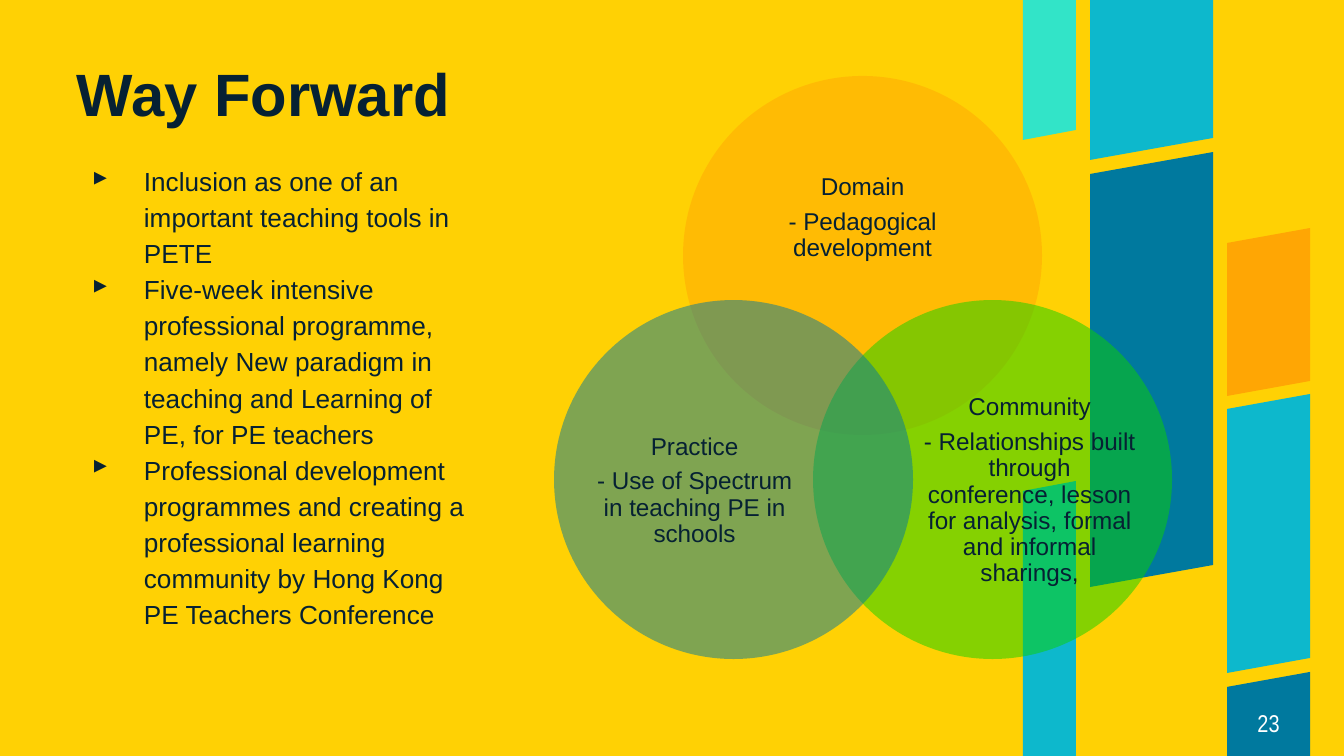
from lxml import etree
from pptx import Presentation
from pptx import util as u
from pptx.dml.color import RGBColor
from pptx.enum import shapes, text
from pptx.oxml.ns import qn

PX = 914400 / 134.4
WIDTH, HEIGHT = 1344, 756
BAND_SLOPE = 0.18
COLORS = {
    "yellow": "FFD104", "navy": "062133", "white": "FFFFFF", "cyan": "0DB8CC",
    "mint": "32E4C8", "blue": "00799E", "orange": "FFA604", "green": "0DD100",
}
# Column: left, width, bands as (top of left side, bottom of left side, colour)
BAND_COLUMNS = [
    (1023, 53, [(491, HEIGHT, "cyan"), (153, 208, "yellow"), (0, 140, "mint")]),
    (1090, 123, [(174, 587, "blue"), (0, 160, "cyan")]),
    (1227, 83, [(243, 396, "orange"), (687, HEIGHT, "blue"), (409, 673, "cyan")]),
]
GOALS = [
    "Inclusion as one of an important teaching tools in PETE",
    "Five-week intensive professional programme, namely New paradigm in teaching "
    "and Learning of PE, for PE teachers",
    "Professional development programmes and creating a professional learning "
    "community by Hong Kong PE Teachers Conference",
]
# Circle: offset, colour, label box (relative to the circle), label lines
CIRCLES = [
    ((129, 0), "orange", (48, 62, 263, 161), ["Domain", "- Pedagogical development"]),
    ((259, 224), "green", (109, 92, 215, 198),
     ["Community", "- Relationships built through conference, lesson for analysis, "
                   "formal and informal sharings,"]),
    ((0, 224), "blue", (33, 92, 215, 198),
     ["Practice", "- Use of Spectrum in teaching PE in schools"]),
]


def px(value):
    return u.Emu(round(value * PX))


def rgb(name):
    return RGBColor.from_string(COLORS[name])


def paint(shape, color, opacity=None):
    shape.shadow.inherit = False
    shape.fill.solid()
    shape.fill.fore_color.rgb = rgb(color)
    shape.line.fill.background()
    if opacity is not None:
        fill_color = shape.fill._xPr.find(qn("a:solidFill"))[0]
        etree.SubElement(fill_color, qn("a:alpha"), val=str(opacity * 1000))


def add_bullet(paragraph, char, indent, hanging):
    properties = paragraph._p.get_or_add_pPr()
    properties.set("marL", str(px(indent)))
    properties.set("indent", str(-px(hanging)))
    etree.SubElement(properties, qn("a:buChar"), char=char)


def write(frame, lines, size, color="navy", font="Arial", bold=False,
          align=text.PP_ALIGN.LEFT, anchor=text.MSO_ANCHOR.TOP,
          spacing=1.0, after=0, bullet=None):
    frame.word_wrap = True
    frame.auto_size = text.MSO_AUTO_SIZE.NONE
    frame.vertical_anchor = anchor
    frame.margin_left = frame.margin_right = frame.margin_top = frame.margin_bottom = 0
    for index, line in enumerate(lines):
        paragraph = frame.add_paragraph() if index else frame.paragraphs[0]
        if bullet:
            add_bullet(paragraph, bullet, indent=67, hanging=52)
        paragraph.text = line
        paragraph.alignment = align
        paragraph.line_spacing = spacing
        paragraph.space_before = u.Pt(0)
        paragraph.space_after = u.Pt(after)
        paragraph.font.size = u.Pt(size)
        paragraph.font.name = font
        paragraph.font.bold = bold
        paragraph.font.color.rgb = rgb(color)


def add_text(slide, box, lines, size, **style):
    textbox = slide.shapes.add_textbox(*map(px, box))
    write(textbox.text_frame, lines, size, **style)


def add_band_column(slide, left, width, bands):
    """Bands rise to the right, except along the slide's own edges."""
    rise = round(width * BAND_SLOPE)
    right = left + width
    for top, bottom, color in bands:
        right_top, right_bottom = (
            y if y in (0, HEIGHT) else y - rise for y in (top, bottom))
        outline = slide.shapes.build_freeform(left, top, scale=PX)
        outline.add_line_segments(
            [(right, right_top), (right, right_bottom), (left, bottom)], close=True)
        paint(outline.convert_to_shape(), color)


def add_title(slide, box, title):
    heading = slide.shapes.title
    heading.left, heading.top, heading.width, heading.height = map(px, box)
    write(heading.text_frame, [title], 32, bold=True, spacing=0.9,
          anchor=text.MSO_ANCHOR.BOTTOM)


def add_venn(slide, left, top, diameter):
    for (dx, dy), color, (label_x, label_y, width, height), lines in CIRCLES:
        x, y = left + dx, top + dy
        circle = slide.shapes.add_shape(
            shapes.MSO_SHAPE.OVAL, px(x), px(y), px(diameter), px(diameter))
        paint(circle, color, opacity=50)
        add_text(slide, (x + label_x, y + label_y, width, height), lines, 13,
                 align=text.PP_ALIGN.CENTER, anchor=text.MSO_ANCHOR.MIDDLE,
                 spacing=0.9, after=4.5)


def main():
    deck = Presentation()
    deck.slide_width, deck.slide_height = px(WIDTH), px(HEIGHT)
    slide = deck.slides.add_slide(deck.slide_layouts.get_by_name("Title Only"))
    slide.background.fill.solid()
    slide.background.fill.fore_color.rgb = rgb("yellow")

    for column in BAND_COLUMNS:
        add_band_column(slide, *column)
    add_text(slide, (1227, 689, 83, 67), ["23"], 13, color="white", font="Arial Narrow",
             align=text.PP_ALIGN.CENTER, anchor=text.MSO_ANCHOR.MIDDLE)
    add_title(slide, (77, 54, 919, 75), "Way Forward")
    add_text(slide, (77, 161, 394, 560), GOALS, 14, spacing=1.15, bullet="▸")
    add_venn(slide, 554, 76, diameter=359)
    deck.save("out.pptx")


if __name__ == "__main__":
    main()
